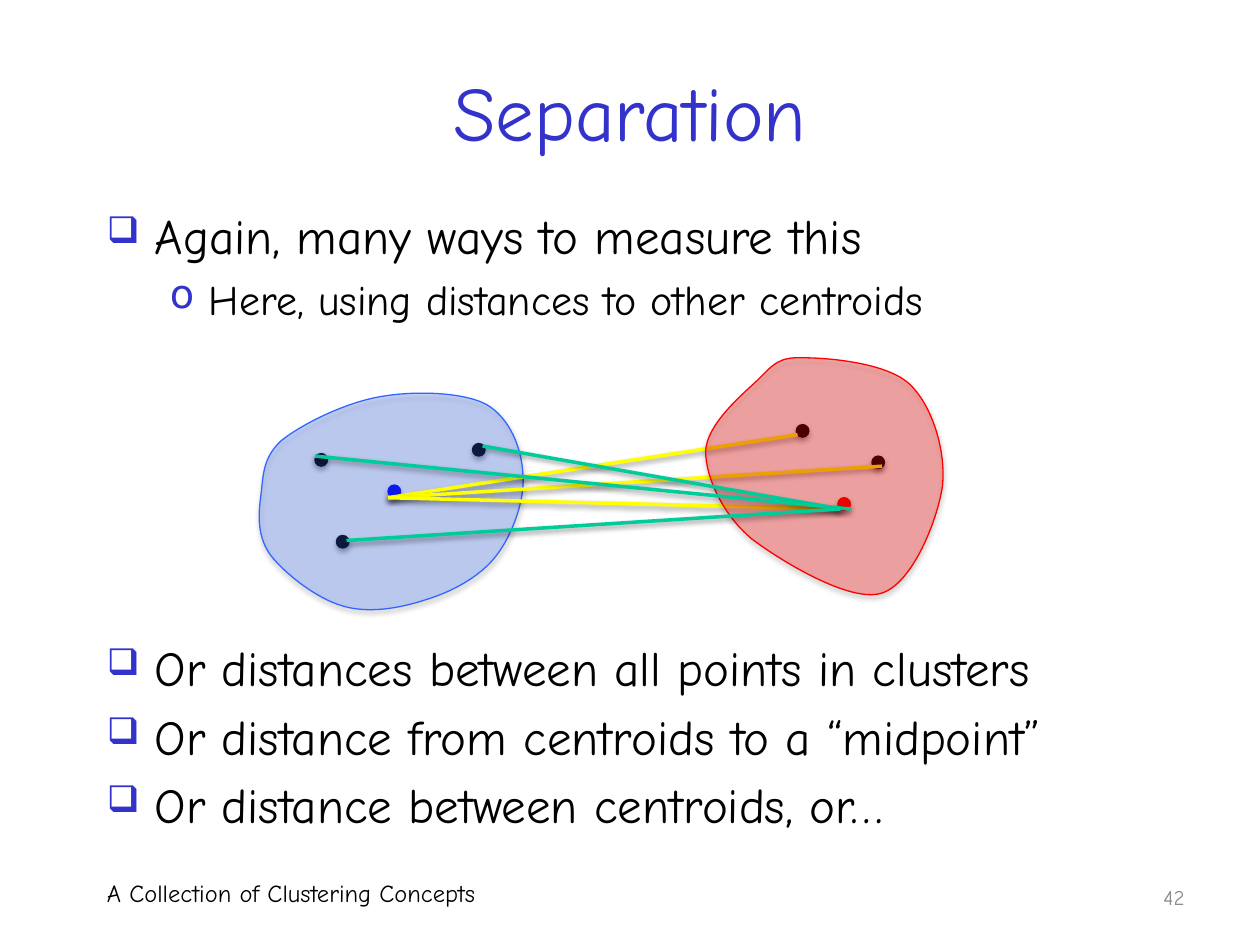
from dataclasses import dataclass

from lxml import etree
from pptx import Presentation, util as u
from pptx.dml.color import RGBColor
from pptx.enum import shapes, text
from pptx.oxml import parse_xml
from pptx.oxml.ns import nsdecls, qn

FONT = "Comic Neue"
COLORS = {
    "accent": "3333CC",
    "ink": "000000",
    "muted": "8C8C8C",
    "left": "3366FF",
    "left_centroid": "0000FF",
    "right": "FF0000",
    "from_left": "FFFF00",
    "from_right": "00CC99",
}
DOT = 0.1


@dataclass
class Bullet:
    wording: str
    size: float
    margin: float
    hanging: float
    before: float
    mark: str
    mark_percent: int


@dataclass
class Dot:
    left: float
    top: float
    color: str = "ink"


@dataclass
class Distance:
    start: tuple[float, float]
    end: tuple[float, float]
    color: str


@dataclass
class Cluster:
    start: tuple[float, float]
    curves: list[tuple[float, ...]]
    color: str
    opacity: int


def topic(wording: str, before: float = 5.6) -> Bullet:
    return Bullet(wording, 28, 0.38, 0.38, before, "❑", 75)


def detail(wording: str) -> Bullet:
    return Bullet(wording, 24, 0.81, 0.31, 5.5, "o", 95)


BULLETS = [
    topic("Again, many ways to measure this"),
    detail("Here, using distances to other centroids"),
    topic("Or distances between all points in clusters", 179),
    topic("Or distance from centroids to a “midpoint”"),
    topic("Or distance between centroids, or…"),
]
LEFT_DOTS = [Dot(2.5, 3.6), Dot(3.08, 3.85, "left_centroid"), Dot(3.75, 3.52), Dot(2.67, 4.25)]
RIGHT_DOTS = [Dot(6.32, 3.37), Dot(6.65, 3.95, "right"), Dot(6.92, 3.62)]
LEFT_CLUSTER = Cluster((2.23, 3.5), [
    (2.39, 3.37, 2.73, 3.2, 3.01, 3.15),
    (3.28, 3.1, 3.67, 3.11, 3.86, 3.21),
    (4.05, 3.32, 4.14, 3.56, 4.15, 3.76),
    (4.17, 3.96, 4.07, 4.24, 3.94, 4.41),
    (3.81, 4.58, 3.58, 4.7, 3.38, 4.76),
    (3.17, 4.83, 2.92, 4.87, 2.72, 4.81),
    (2.51, 4.75, 2.26, 4.55, 2.15, 4.41),
    (2.04, 4.26, 2.05, 4.09, 2.07, 3.94),
    (2.09, 3.79, 2.08, 3.64, 2.23, 3.5),
], "left", 25)
RIGHT_CLUSTER = Cluster((6.01, 3.02), [
    (6.14, 2.89, 6.18, 2.83, 6.38, 2.84),
    (6.58, 2.84, 7.04, 2.88, 7.22, 3.05),
    (7.4, 3.22, 7.51, 3.58, 7.48, 3.86),
    (7.44, 4.13, 7.24, 4.64, 6.99, 4.71),
    (6.74, 4.78, 6.21, 4.46, 5.97, 4.28),
    (5.74, 4.09, 5.6, 3.79, 5.6, 3.58),
    (5.61, 3.37, 5.88, 3.14, 6.01, 3.02),
], "right", 30)
FROM_LEFT = [Distance(point, (3.08, 3.95), "from_left")
             for point in [(6.33, 3.45), (7, 3.7), (6.67, 4.04)]]
FROM_RIGHT = [
    Distance((3.83, 3.54), (6.67, 4.04), "from_right"),
    Distance((2.5, 3.62), (6.75, 4.04), "from_right"),
    Distance((2.75, 4.29), (6.67, 4.04), "from_right"),
]


def rgb(name: str) -> RGBColor:
    return RGBColor.from_string(COLORS[name])


def style(paragraph, size: float, color: str) -> None:
    for run in paragraph.runs:
        run.font.name = FONT
        run.font.size = u.Pt(size)
        run.font.color.rgb = rgb(color)


def cast_shadow(shape, distance: float, opacity: int) -> None:
    properties = shape._element.spPr
    for effects in properties.findall(qn("a:effectLst")):
        properties.remove(effects)
    properties.append(parse_xml(
        f'<a:effectLst {nsdecls("a")}><a:outerShdw blurRad="{u.Pt(3.1)}" '
        f'dist="{u.Pt(distance)}" dir="5400000" rotWithShape="0">'
        f'<a:srgbClr val="{COLORS["ink"]}"><a:alpha val="{opacity * 1000}"/>'
        '</a:srgbClr></a:outerShdw></a:effectLst>'))


def paint(shape, color: str) -> None:
    shape.fill.solid()
    shape.fill.fore_color.rgb = rgb(color)
    shape.line.color.rgb = rgb(color)
    shape.line.width = u.Pt(0.75)
    cast_shadow(shape, 1.8, 35)


def draw_dots(slide, dots: list[Dot]) -> None:
    for dot in dots:
        point = slide.shapes.add_shape(
            shapes.MSO_SHAPE.OVAL, u.Inches(dot.left), u.Inches(dot.top),
            u.Inches(DOT), u.Inches(DOT))
        paint(point, dot.color)


def draw_cluster(slide, cluster: Cluster) -> None:
    controls = [(u.Inches(curve[i]), u.Inches(curve[i + 1]))
                for curve in cluster.curves for i in (0, 2, 4)]
    builder = slide.shapes.build_freeform(*map(u.Inches, cluster.start))
    builder.add_line_segments(controls, close=True)
    region = builder.convert_to_shape()
    segments = list(region._element.iter(qn("a:lnTo")))
    for first in range(0, len(controls), 3):
        bezier = etree.Element(qn("a:cubicBezTo"))
        segments[first].addprevious(bezier)
        for segment in segments[first:first + 3]:
            bezier.append(segment[0])
            segment.getparent().remove(segment)
    paint(region, cluster.color)
    tint = region._element.spPr.find(qn("a:solidFill"))[0]
    etree.SubElement(tint, qn("a:alpha"), val=str(cluster.opacity * 1000))


def draw_distances(slide, distances: list[Distance]) -> None:
    for distance in distances:
        link = slide.shapes.add_connector(
            shapes.MSO_CONNECTOR.STRAIGHT,
            *map(u.Inches, distance.start + distance.end))
        link.line.color.rgb = rgb(distance.color)
        link.line.width = u.Pt(2)
        cast_shadow(link, 1.6, 38)


def add_frame(slide, left: float, top: float, width: float, height: float):
    frame = slide.shapes.add_textbox(*map(u.Inches, (left, top, width, height))).text_frame
    frame.word_wrap = True
    return frame


def write_bullets(frame, bullets: list[Bullet]) -> None:
    for index, bullet in enumerate(bullets):
        paragraph = frame.add_paragraph() if index else frame.paragraphs[0]
        paragraph.text = bullet.wording
        paragraph.space_before = u.Pt(bullet.before)
        style(paragraph, bullet.size, "ink")
        properties = paragraph._p.get_or_add_pPr()
        properties.set("marL", str(u.Inches(bullet.margin)))
        properties.set("indent", str(-u.Inches(bullet.hanging)))
        tint = etree.SubElement(properties, qn("a:buClr"))
        etree.SubElement(tint, qn("a:srgbClr"), val=COLORS["accent"])
        etree.SubElement(properties, qn("a:buSzPct"), val=str(bullet.mark_percent * 1000))
        etree.SubElement(properties, qn("a:buChar"), char=bullet.mark)


def main() -> None:
    deck = Presentation()
    deck.slide_width, deck.slide_height = u.Inches(10), u.Inches(7.5)
    slide = deck.slides.add_slide(deck.slide_layouts[5])

    title = slide.shapes.title
    title.left, title.top, title.width, title.height = map(u.Inches, (0.75, 0.25, 8.5, 1.25))
    title.text_frame.text = "Separation"
    title.text_frame.vertical_anchor = text.MSO_ANCHOR.MIDDLE
    title.text_frame.paragraphs[0].alignment = text.PP_ALIGN.CENTER
    style(title.text_frame.paragraphs[0], 44, "accent")

    write_bullets(add_frame(slide, 0.75, 1.58, 8.83, 5.08), BULLETS)

    footer = add_frame(slide, 0.75, 6.92, 4.42, 0.42)
    footer.text = "A Collection of Clustering Concepts"
    style(footer.paragraphs[0], 14, "ink")

    page = add_frame(slide, 7.17, 6.92, 2.33, 0.4)
    page.text = "42"
    page.vertical_anchor = text.MSO_ANCHOR.MIDDLE
    page.paragraphs[0].alignment = text.PP_ALIGN.RIGHT
    style(page.paragraphs[0], 12, "muted")

    draw_dots(slide, LEFT_DOTS)
    draw_cluster(slide, LEFT_CLUSTER)
    draw_dots(slide, RIGHT_DOTS)
    draw_distances(slide, FROM_LEFT)
    draw_cluster(slide, RIGHT_CLUSTER)
    draw_distances(slide, FROM_RIGHT)
    deck.save("out.pptx")


if __name__ == "__main__":
    main()
